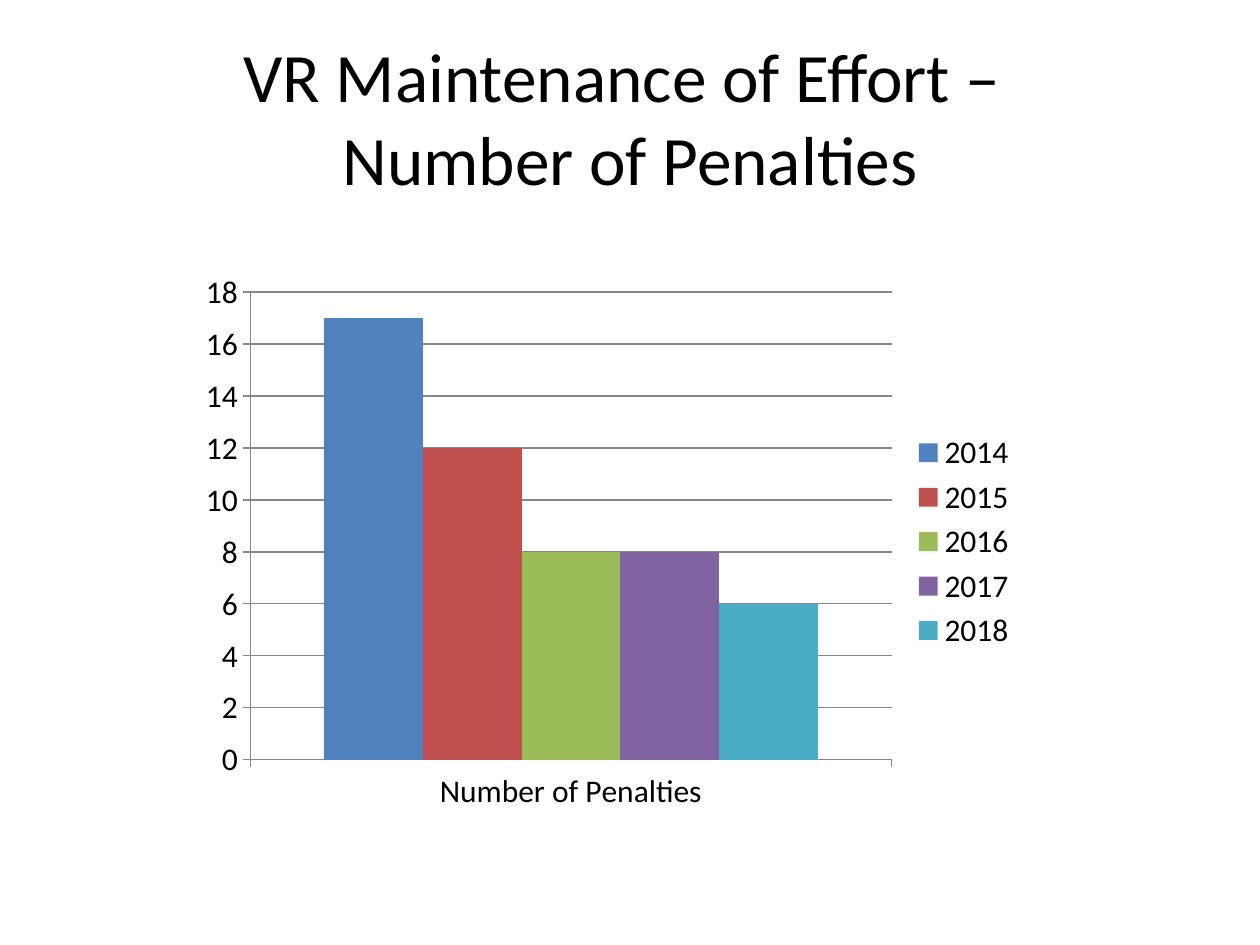
from dataclasses import dataclass

import pptx
import pptx.chart.data
import pptx.dml.color
import pptx.enum.chart
import pptx.enum.text
import pptx.util
from pptx.util import Cm


@dataclass(frozen=True)
class Theme:
    font: str = "Calibri"
    title_size: float = 39.6
    chart_size: float = 18
    text: str = "000000"
    rule: str = "878787"
    years: tuple = ("4F81BD", "C0504D", "9BBB59", "8064A2", "4BACC6")


THEME = Theme()
PENALTIES = {"2014": 17, "2015": 12, "2016": 8, "2017": 8, "2018": 6}


def rgb(value):
    return pptx.dml.color.RGBColor.from_string(value)


def style_font(font, size):
    font.name = THEME.font
    font.size = pptx.util.Pt(size)
    font.color.rgb = rgb(THEME.text)


def style_rule(line):
    line.color.rgb = rgb(THEME.rule)
    line.width = pptx.util.Pt(0.75)


def place_heading(slide, left, top, width, height):
    heading = slide.shapes.title
    heading.left, heading.top = left, top
    heading.width, heading.height = width, height
    frame = heading.text_frame
    frame.word_wrap = True
    frame.auto_size = pptx.enum.text.MSO_AUTO_SIZE.NONE
    frame.vertical_anchor = pptx.enum.text.MSO_ANCHOR.MIDDLE
    frame.text = "VR Maintenance of Effort – \vNumber of Penalties"
    paragraph = frame.paragraphs[0]
    paragraph.alignment = pptx.enum.text.PP_ALIGN.CENTER
    style_font(paragraph.font, THEME.title_size)


def place_penalties_chart(slide, left, top, width, height):
    penalties = pptx.chart.data.CategoryChartData(number_format="General")
    penalties.categories = ["Number of Penalties"]
    for year, count in PENALTIES.items():
        penalties.add_series(year, [count])

    chart = slide.shapes.add_chart(
        pptx.enum.chart.XL_CHART_TYPE.COLUMN_CLUSTERED,
        left, top, width, height, penalties,
    ).chart
    style_font(chart.font, THEME.chart_size)
    chart.has_title = False
    chart.has_legend = True
    chart.legend.position = pptx.enum.chart.XL_LEGEND_POSITION.RIGHT
    chart.legend.include_in_layout = False

    columns = chart.plots[0]
    columns.gap_width = 150
    columns.overlap = 0
    columns.vary_by_categories = False
    for year, color in zip(columns.series, THEME.years):
        year.format.fill.solid()
        year.format.fill.fore_color.rgb = rgb(color)

    for axis in (chart.category_axis, chart.value_axis):
        axis.major_tick_mark = pptx.enum.chart.XL_TICK_MARK.OUTSIDE
        axis.minor_tick_mark = pptx.enum.chart.XL_TICK_MARK.NONE
        style_rule(axis.format.line)
    counts = chart.value_axis
    counts.minimum_scale, counts.maximum_scale, counts.major_unit = 0, 18, 2
    counts.has_major_gridlines = True
    style_rule(counts.major_gridlines.format.line)


def main():
    deck = pptx.Presentation()
    deck.slide_width, deck.slide_height = Cm(25.4), Cm(19.05)
    slide = deck.slides.add_slide(deck.slide_layouts.get_by_name("Title Only"))
    place_heading(slide, Cm(1.27), Cm(0.76), Cm(22.86), Cm(3.18))
    place_penalties_chart(slide, Cm(3.81), Cm(5.28), Cm(16.94), Cm(11.28))
    deck.save("out.pptx")


if __name__ == "__main__":
    main()
